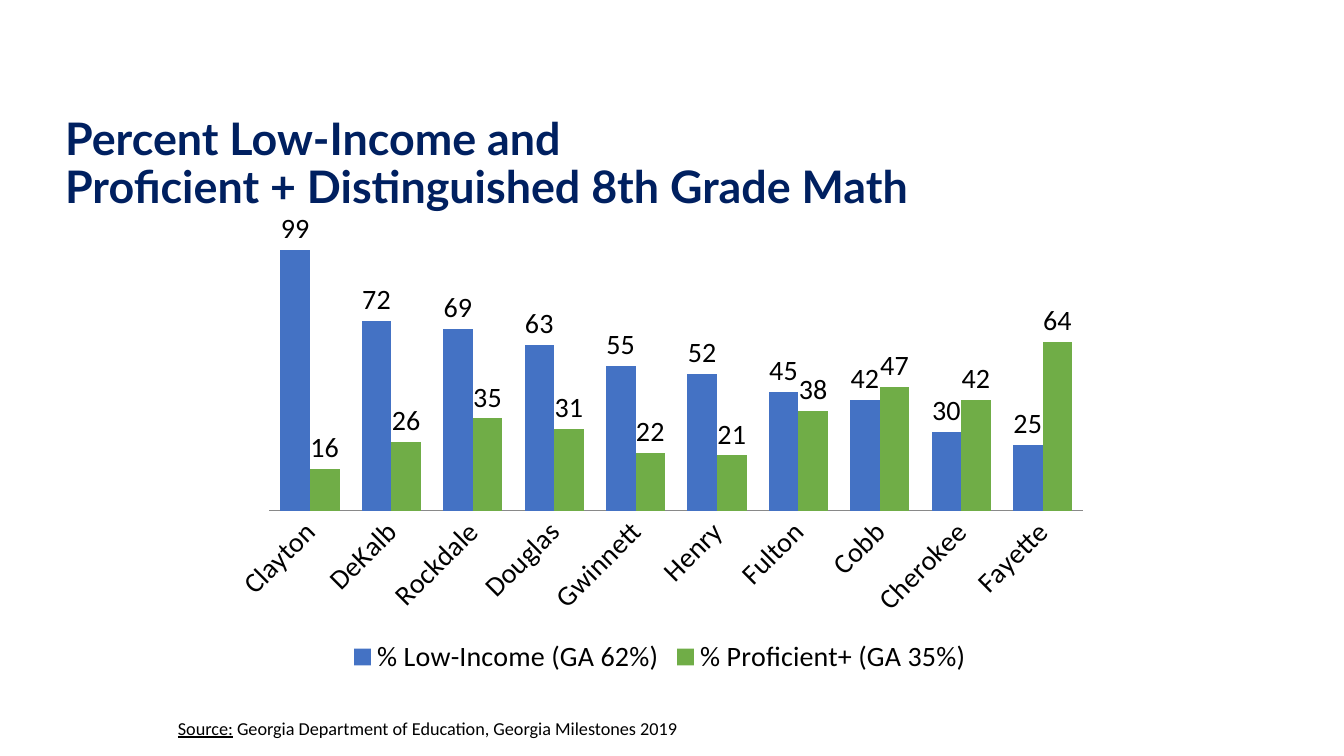
from lxml import etree
from pptx import Presentation
from pptx import util as u
from pptx.chart.data import CategoryChartData
from pptx.dml.color import RGBColor
from pptx.enum import chart as ch, text
from pptx.oxml import parse_xml
from pptx.oxml.ns import nsdecls

PX = 914400 / 100.8
COLORS = {"title": "002060", "text": "000000", "axis": "898989",
          "income": "4472C4", "proficient": "70AD47"}


def px(*lengths):
    return [u.Emu(round(n * PX)) for n in lengths]


def add_run(p, content, font, size, color, bold=False, underline=False):
    r = p.add_run()
    r.text = content
    r.font.name, r.font.size = font, u.Pt(size)
    r.font.bold, r.font.underline = bold, underline
    r.font.color.rgb = RGBColor.from_string(COLORS[color])


prs = Presentation()
prs.slide_width, prs.slide_height = px(1344, 756)
s = prs.slides.add_slide(prs.slide_layouts[5])

# Title
sp = s.shapes.title
sp.left, sp.top, sp.width, sp.height = px(55, 92, 1234, 146)
tf = sp.text_frame
tf.word_wrap = True
tf.auto_size = text.MSO_AUTO_SIZE.NONE
tf.vertical_anchor = text.MSO_ANCHOR.MIDDLE
p = tf.paragraphs[0]
p.alignment = text.PP_ALIGN.LEFT
p.line_spacing = 0.9
add_run(p, "Percent Low-Income and ", "Lato", 32, "title", bold=True)
p.add_line_break()
add_run(p, "Proficient + Distinguished 8th Grade Math", "Lato", 32, "title", bold=True)

# Source line
sp = s.shapes.add_textbox(*px(168, 720, 882, 25))
tf = sp.text_frame
tf.word_wrap = True
p = tf.paragraphs[0]
p.line_spacing = 0.6
add_run(p, "Source:", "Calibri", 13, "text", underline=True)
add_run(p, " Georgia Department of Education, Georgia Milestones 2019",
        "Calibri", 13, "text")

# Chart data
data = CategoryChartData(number_format="0")
data.categories = ["Clayton", "DeKalb", "Rockdale", "Douglas", "Gwinnett",
                   "Henry", "Fulton", "Cobb", "Cherokee", "Fayette"]
data.add_series("% Low-Income (GA 62%)", [99, 72, 69, 63, 55, 52, 45, 42, 30, 25])
data.add_series("% Proficient+ (GA 35%)", [16, 26, 35, 31, 22, 21, 38, 47, 42, 64])
chart = s.shapes.add_chart(ch.XL_CHART_TYPE.COLUMN_CLUSTERED,
                           *px(219, 184, 882, 496), data).chart
chart.has_title = False
chart.font.name, chart.font.size = "Calibri", u.Pt(20)
chart.font.color.rgb = RGBColor.from_string(COLORS["text"])
chart.has_legend = True
chart.legend.position = ch.XL_LEGEND_POSITION.BOTTOM
chart.legend.include_in_layout = False

# Axes
axis = chart.category_axis
axis.major_tick_mark = ch.XL_TICK_MARK.NONE
axis.format.line.color.rgb = RGBColor.from_string(COLORS["axis"])
axis.tick_labels.font.size = u.Pt(20)
axis.tick_labels.font.color.rgb = RGBColor.from_string(COLORS["text"])
axis._element.txPr.bodyPr.set("rot", "-2700000")
axis = chart.value_axis
axis.minimum_scale, axis.maximum_scale = 0, 100
axis.has_major_gridlines = False
axis.visible = False

# Columns and their labels
plot = chart.plots[0]
plot.gap_width, plot.overlap = 75, 0
plot.vary_by_categories = False
for series, color in zip(plot.series, ["income", "proficient"]):
    series.format.fill.solid()
    series.format.fill.fore_color.rgb = RGBColor.from_string(COLORS[color])
    labels = series.data_labels
    labels.show_value = True
    labels.number_format, labels.number_format_is_linked = "0", False
    labels.position = ch.XL_LABEL_POSITION.OUTSIDE_END

# Plot area as fractions of the chart frame
layout = parse_xml(f"<c:layout {nsdecls('c')}><c:manualLayout/></c:layout>")
settings = [("layoutTarget", "inner"), ("xMode", "edge"), ("yMode", "edge"),
            ("x", 0.057), ("y", 0.127), ("w", 0.923), ("h", 0.532)]
for tag, value in settings:
    etree.SubElement(layout[0], f"{{{layout.nsmap['c']}}}{tag}", val=str(value))
area = chart._chartSpace.chart.plotArea
for old in area.findall("c:layout", area.nsmap):
    area.remove(old)
area.insert(0, layout)

prs.save("out.pptx")
